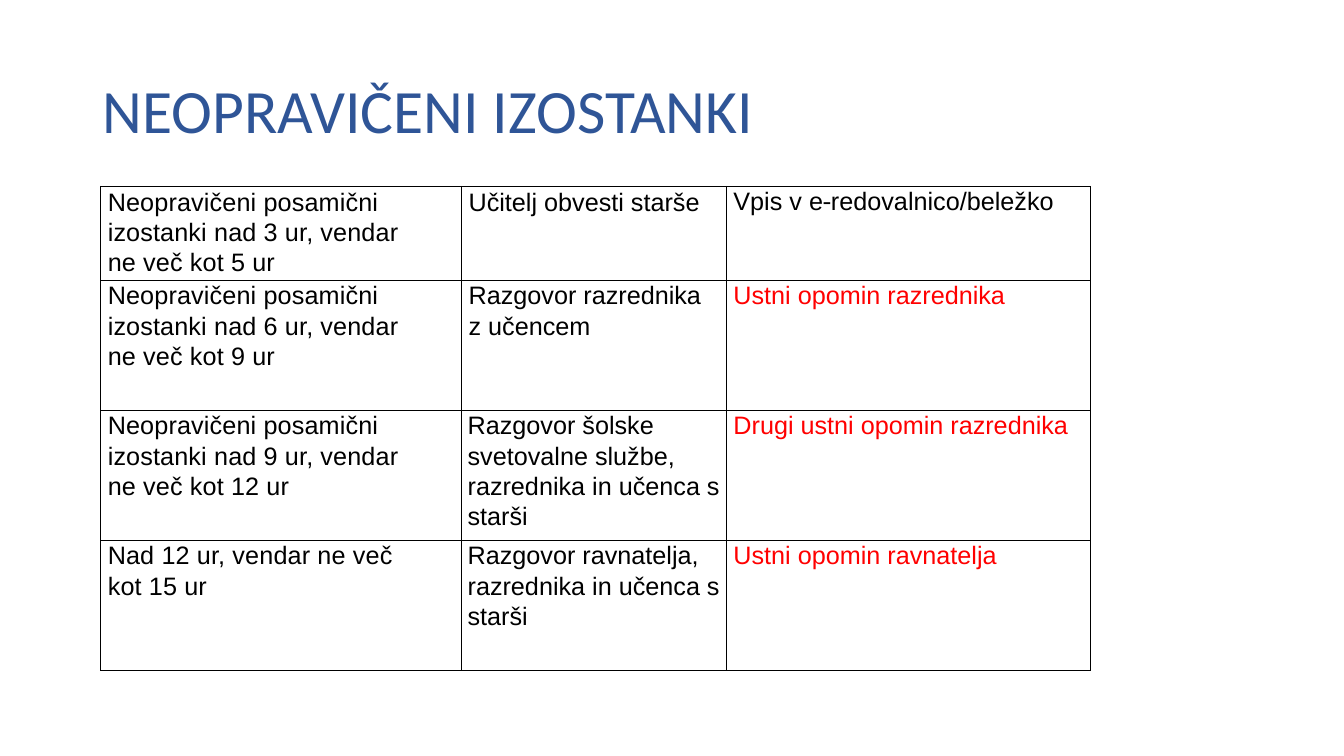
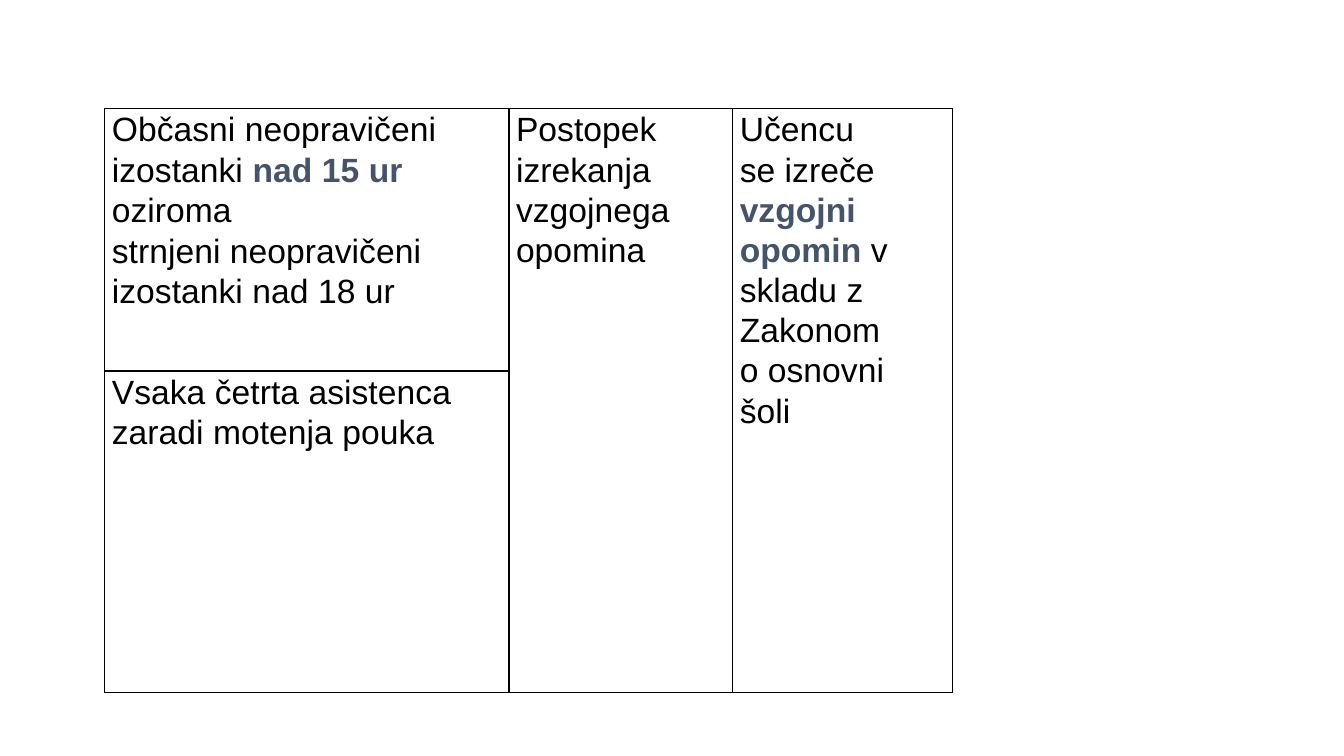
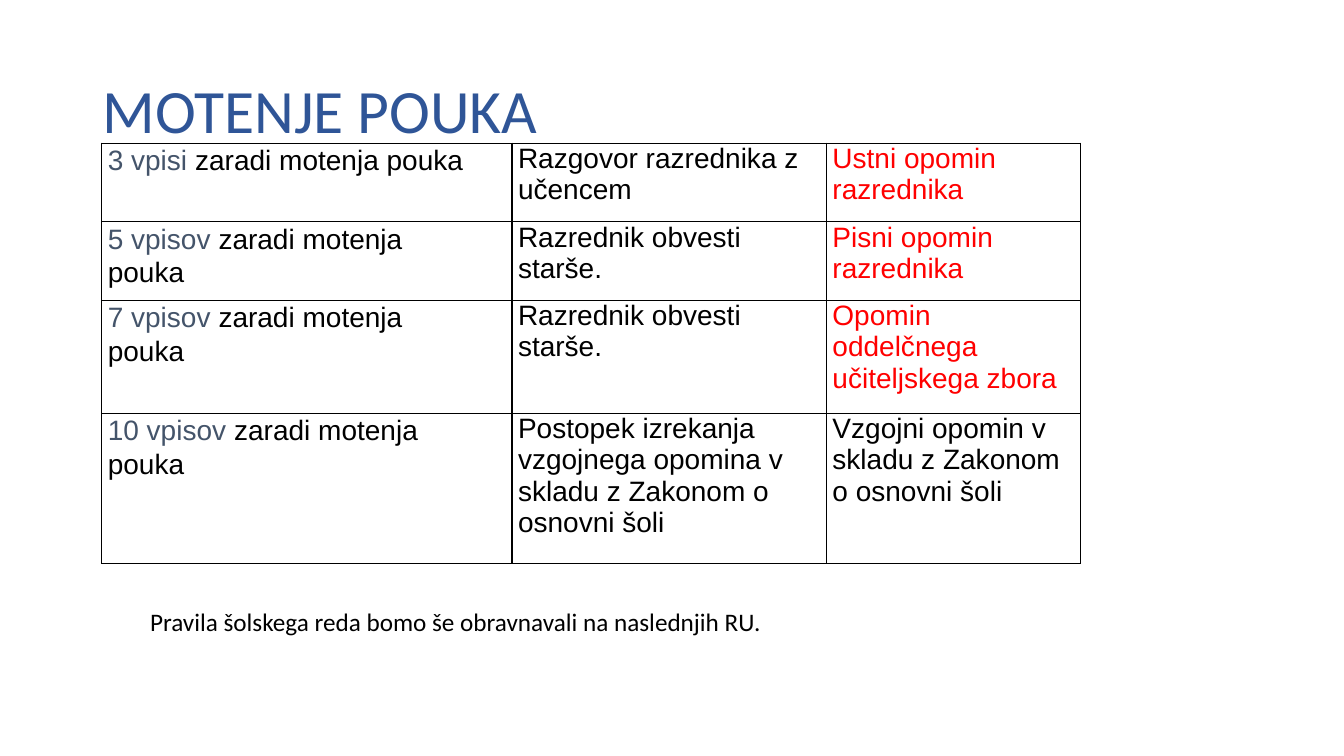
import lxml.etree
import pptx
import pptx.dml.color
import pptx.enum.text
import pptx.oxml.ns
import pptx.util

COLORS = {"title": "2F5597", "text": "000000", "warning": "FF0000", "accent": "44546A"}
BODY_FONT = "Arial"
TITLE_FONT = "Calibri"
CELL_INSET = 4.3
LOOSE_LINE = 1.195
BORDER_WIDTH = 1
TITLE_BOX = (66.24, 28.8, 828, 104.4)

RUN_STYLES = {
    "plain": {"color": "text"},
    "warning": {"color": "warning"},
    "accent": {"color": "accent"},
    "strong": {"color": "accent", "bold": True},
    "hyphen": {"color": "text", "name": "Cambria"},
}


def points(values):
    return [pptx.util.Pt(value) for value in values]


def add_run(paragraph, text, color, spacing=0, **font_values):
    run = paragraph.add_run()
    run.text = text
    for name, value in font_values.items():
        setattr(run.font, name, value)
    run.font.color.rgb = pptx.dml.color.RGBColor.from_string(COLORS[color])
    if spacing:
        run.font._element.set("spc", str(round(spacing * 100)))


def add_text(slide, box, text, frame_values, line_spacing, **run_values):
    frame = slide.shapes.add_textbox(*points(box)).text_frame
    for name, value in frame_values.items():
        setattr(frame, name, value)
    paragraph = frame.paragraphs[0]
    paragraph.line_spacing = line_spacing
    add_run(paragraph, text, name=TITLE_FONT, **run_values)


def add_title(slide, text):
    frame_values = {"word_wrap": True, "vertical_anchor": pptx.enum.text.MSO_ANCHOR.MIDDLE}
    add_text(slide, TITLE_BOX, text, frame_values, 0.9,
             color="title", size=pptx.util.Pt(44))


def add_borders(cell):
    properties = cell._tc.get_or_add_tcPr()
    qualified = pptx.oxml.ns.qn
    for side in ("lnL", "lnR", "lnT", "lnB"):
        line = lxml.etree.SubElement(properties, qualified(f"a:{side}"),
                                     w=str(pptx.util.Pt(BORDER_WIDTH)))
        fill = lxml.etree.SubElement(line, qualified("a:solidFill"))
        lxml.etree.SubElement(fill, qualified("a:srgbClr"), val=COLORS["text"])


def fill_cell(cell, paragraphs, column, font_size):
    """Write a cell; each paragraph is a list of (text, run style) pairs."""
    loose_spacing = pptx.util.Pt(round(font_size * LOOSE_LINE, 1))
    for index, runs in enumerate(paragraphs):
        frame = cell.text_frame
        paragraph = frame.add_paragraph() if index else frame.paragraphs[0]
        paragraph.line_spacing = column.get("line_spacing", loose_spacing)
        if index:
            paragraph.space_before = pptx.util.Pt(0.8)
        for text, style in runs:
            values = {"name": BODY_FONT, "size": pptx.util.Pt(font_size),
                      "spacing": column.get("spacing", 0), **RUN_STYLES[style]}
            add_run(paragraph, text, **values)


def add_grid(slide, left, top, columns, heights, rows, font_size):
    """Draw a bordered table; a None cell is merged into the one above it.

    A column's row_insets give (left, right) insets for single rows.
    """
    width = sum(column["width"] for column in columns)
    box = points((left, top, width, sum(heights)))
    table = slide.shapes.add_table(len(rows), len(columns), *box).table
    table.first_row = table.horz_banding = False
    for table_column, column in zip(table.columns, columns):
        table_column.width = pptx.util.Pt(column["width"])
    for row_index, (height, row) in enumerate(zip(heights, rows)):
        table.rows[row_index].height = pptx.util.Pt(height)
        for column_index, (column, paragraphs) in enumerate(zip(columns, row)):
            cell = table.cell(row_index, column_index)
            insets = (column.get("left", CELL_INSET), column.get("right", CELL_INSET))
            inset_left, inset_right = column.get("row_insets", {}).get(row_index, insets)
            margins = {"margin_left": inset_left, "margin_right": inset_right,
                       "margin_top": 0, "margin_bottom": 0}
            for name, value in margins.items():
                setattr(cell, name, pptx.util.Pt(value))
            add_borders(cell)
            cell.fill.background()
            if paragraphs is None:
                table.cell(row_index - 1, column_index).merge(cell)
            else:
                fill_cell(cell, paragraphs, column, font_size)


def single(text, style="plain"):
    return [[(text, style)]]


def build_absences(slide):
    add_title(slide, "NEOPRAVIČENI IZOSTANKI")
    columns = [
        {"width": 257.76, "left": 5, "right": 35, "spacing": 0.1},
        {"width": 189.36, "right": 4, "row_insets": {0: (5, 9), 1: (5, 9)}},
        {"width": 259.92, "left": 4.8},
    ]
    rows = [
        [single("Neopravičeni posamični izostanki nad 3 ur, vendar ne več kot 5 ur"),
         single("Učitelj obvesti starše"),
         [[("Vpis v e", "plain"), ("‐", "hyphen"), ("redovalnico/beležko", "plain")]]],
        [single("Neopravičeni posamični izostanki nad 6 ur, vendar ne več kot 9 ur"),
         single("Razgovor razrednika z učencem"),
         single("Ustni opomin razrednika", "warning")],
        [single("Neopravičeni posamični izostanki nad 9 ur, vendar ne več kot 12 ur"),
         single("Razgovor šolske svetovalne službe, razrednika in učenca s starši"),
         single("Drugi ustni opomin razrednika", "warning")],
        [single("Nad 12 ur, vendar ne več kot 15 ur"),
         single("Razgovor ravnatelja, razrednika in učenca s starši"),
         single("Ustni opomin ravnatelja", "warning")],
    ]
    add_grid(slide, 72, 133.2, columns, [66.96] + [92.88] * 3, rows, font_size=18)


def build_formal_warning(slide):
    columns = [
        {"width": 288.72, "left": 5, "spacing": 0.05},
        {"width": 159.84, "left": 5, "spacing": 0.05},
        {"width": 156.96, "left": 5, "right": 42, "spacing": 0.05},
    ]
    rows = [
        [[[("Občasni neopravičeni izostanki ", "plain"), ("nad 15 ur ", "strong"),
           ("oziroma", "plain")],
          [("strnjeni neopravičeni izostanki nad 18 ur", "plain")]],
         single("Postopek izrekanja vzgojnega opomina"),
         [[("Učencu se izreče ", "plain"), ("vzgojni opomin ", "strong"),
           ("v skladu z Zakonom o osnovni šoli", "plain")]]],
        [single("Vsaka četrta asistenca zaradi motenja pouka"), None, None],
    ]
    add_grid(slide, 74.88, 77.76, columns, [187.2, 229.5], rows, font_size=24)


def build_disruption(slide):
    add_title(slide, "MOTENJE POUKA")
    columns = [
        {"width": 293.04, "right": 26},
        {"width": 224.64, "line_spacing": 1},
        {"width": 181.44, "line_spacing": 1},
    ]
    steps = [
        ("3 vpisi ", "Razgovor razrednika z učencem",
         "Ustni opomin razrednika", "warning"),
        ("5 vpisov ", "Razrednik obvesti starše.",
         "Pisni opomin razrednika", "warning"),
        ("7 vpisov ", "Razrednik obvesti starše.",
         "Opomin oddelčnega učiteljskega zbora", "warning"),
        ("10 vpisov ", "Postopek izrekanja vzgojnega opomina v skladu z Zakonom o osnovni šoli",
         "Vzgojni opomin v skladu z Zakonom o osnovni šoli", "plain"),
    ]
    rows = [
        [[[(count, "accent"), ("zaradi motenja pouka", "plain")]],
         single(action), single(measure, style)]
        for count, action, measure, style in steps
    ]
    add_grid(slide, 72.72, 102.24, columns, [56.16, 56.16, 80.64, 107.28], rows, font_size=20)
    frame_values = {"word_wrap": False,
                    "auto_size": pptx.enum.text.MSO_AUTO_SIZE.SHAPE_TO_FIT_TEXT}
    add_text(slide, (100.08, 429.84, 451.44, 28.8),
             "Pravila šolskega reda bomo še obravnavali na naslednjih RU.",
             frame_values, 1, color="text", size=pptx.util.Pt(18))


def main():
    presentation = pptx.Presentation()
    presentation.slide_width = pptx.util.Pt(960)
    presentation.slide_height = pptx.util.Pt(540)
    blank_layout = presentation.slide_layouts[6]
    for build in (build_absences, build_formal_warning, build_disruption):
        build(presentation.slides.add_slide(blank_layout))
    presentation.save("out.pptx")


if __name__ == "__main__":
    main()
